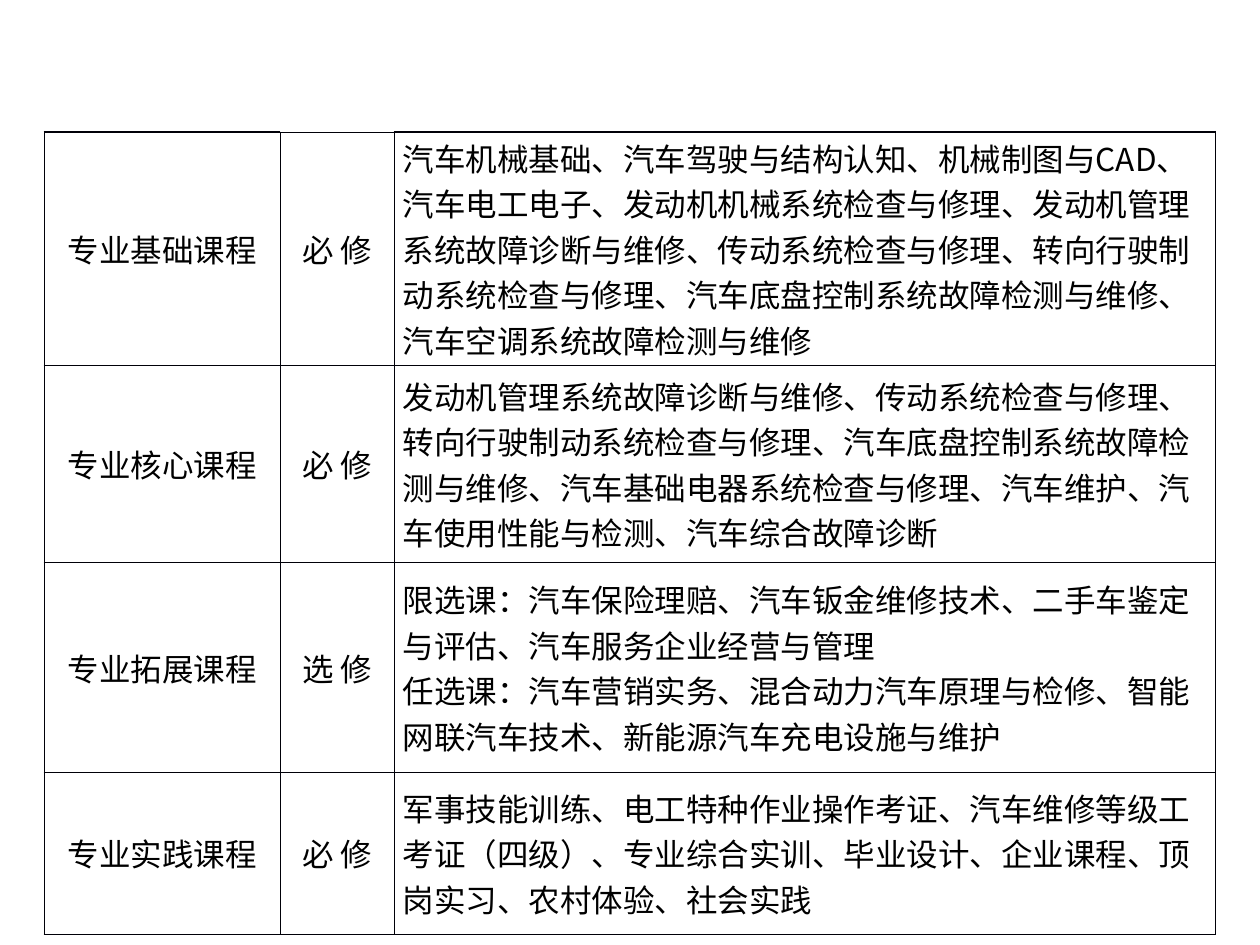
from pptx import Presentation
from pptx.dml.color import RGBColor
from pptx.enum.text import MSO_ANCHOR, PP_ALIGN
from pptx.oxml.ns import qn
from pptx.util import Pt
from lxml.etree import SubElement

FONT = "Noto Sans CJK SC"
BLACK = RGBColor(0x00, 0x00, 0x00)
RULE = RGBColor(0x00, 0x00, 0x08)
THIN, THICK = 0.5, 1.5

LEFT, TOP = 25.2, 75.4
WIDTHS = [134.8, 65.2, 469.2]
HEIGHTS = [133.2, 112.8, 120, 92.4]

# course type, status, paragraphs of courses
COURSES = [
    ("专业基础课程", "必 修", [
        "汽车机械基础、汽车驾驶与结构认知、机械制图与CAD、汽车电工电子、"
        "发动机机械系统检查与修理、发动机管理系统故障诊断与维修、"
        "传动系统检查与修理、转向行驶制动系统检查与修理、"
        "汽车底盘控制系统故障检测与维修、汽车空调系统故障检测与维修"]),
    ("专业核心课程", "必 修", [
        "发动机管理系统故障诊断与维修、传动系统检查与修理、"
        "转向行驶制动系统检查与修理、汽车底盘控制系统故障检测与维修、"
        "汽车基础电器系统检查与修理、汽车维护、汽车使用性能与检测、"
        "汽车综合故障诊断"]),
    ("专业拓展课程", "选 修", [
        "限选课：汽车保险理赔、汽车钣金维修技术、二手车鉴定与评估、"
        "汽车服务企业经营与管理",
        "任选课：汽车营销实务、混合动力汽车原理与检修、智能网联汽车技术、"
        "新能源汽车充电设施与维护"]),
    ("专业实践课程", "必 修", [
        "军事技能训练、电工特种作业操作考证、汽车维修等级工考证（四级）、"
        "专业综合实训、毕业设计、企业课程、顶岗实习、农村体验、社会实践"]),
]


def add_rules(cell, top):
    props = cell._tc.get_or_add_tcPr()
    for side, width in (("L", THIN), ("R", THIN), ("T", top), ("B", THIN)):
        line = SubElement(props, qn(f"a:ln{side}"), w=str(Pt(width)))
        fill = SubElement(line, qn("a:solidFill"))
        SubElement(fill, qn("a:srgbClr"), val=str(RULE))


def fill_cell(cell, texts, align, top):
    add_rules(cell, top)
    cell.fill.background()
    cell.vertical_anchor = MSO_ANCHOR.MIDDLE
    cell.margin_left = cell.margin_right = Pt(5)
    cell.margin_top = cell.margin_bottom = 0
    cell.text = "\n".join(texts)
    for para in cell.text_frame.paragraphs:
        para.alignment = align
        font = para.font
        font.size = Pt(18)
        font.name = FONT
        font.color.rgb = BLACK
        SubElement(font._element, qn("a:ea"), typeface=FONT)


def main():
    deck = Presentation()
    deck.slide_width, deck.slide_height = Pt(720), Pt(540)
    slide = deck.slides.add_slide(deck.slide_layouts[6])
    frame = slide.shapes.add_table(
        len(HEIGHTS), len(WIDTHS), Pt(LEFT), Pt(TOP),
        Pt(sum(WIDTHS)), Pt(sum(HEIGHTS)))
    table = frame.table
    table.first_row = table.horz_banding = False
    for col, width in zip(table.columns, WIDTHS):
        col.width = Pt(width)
    for row, height in zip(table.rows, HEIGHTS):
        row.height = Pt(height)

    for r, (kind, status, courses) in enumerate(COURSES):
        for c, texts in enumerate(([kind], [status], courses)):
            align = PP_ALIGN.LEFT if c == 2 else PP_ALIGN.CENTER
            top = THICK if r == 0 and c != 1 else THIN
            fill_cell(table.cell(r, c), texts, align, top)
    deck.save("out.pptx")


if __name__ == "__main__":
    main()
